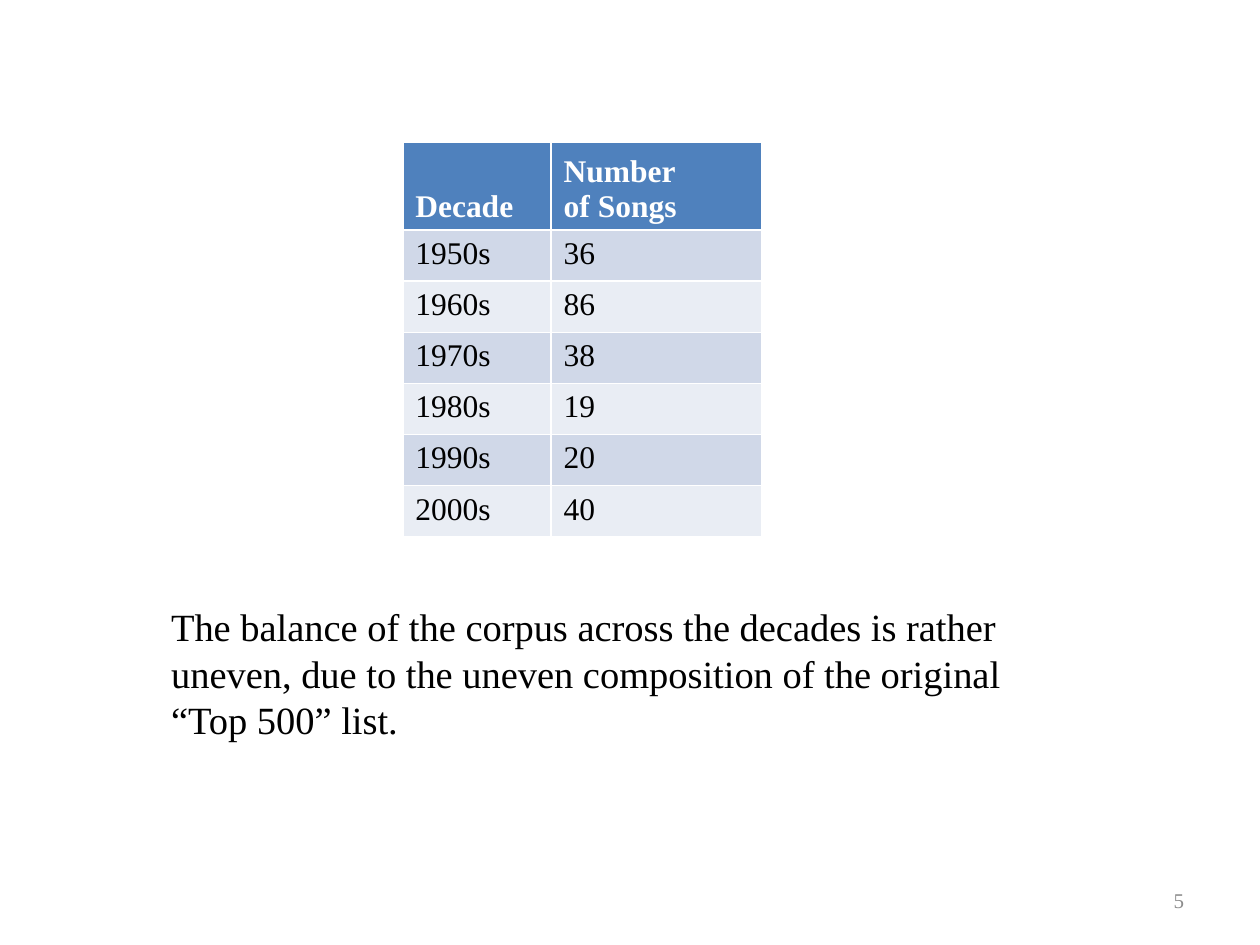
from pptx import Presentation
from pptx import util as u
from pptx.dml.color import RGBColor
from pptx.enum import text

FONT = "Times New Roman"


def style(paragraph, size, color, bold=False):
    font = paragraph.font
    font.name, font.size, font.bold = FONT, u.Pt(size), bold
    font.color.rgb = RGBColor.from_string(color)


def add_text(page, left, top, width, height, words, size, color):
    box = page.shapes.add_textbox(u.Cm(left), u.Cm(top), u.Cm(width), u.Cm(height))
    box.text_frame.word_wrap = True
    box.text_frame.text = words
    style(box.text_frame.paragraphs[0], size, color)
    return box.text_frame


deck = Presentation()
deck.slide_width, deck.slide_height = u.Cm(25.4), u.Cm(19.05)
page = deck.slides.add_slide(deck.slide_layouts[6])

# Page number
number = add_text(page, 18.2, 17.65, 5.92, 1.01, "5", 12, "8C8C8C")
number.vertical_anchor = text.MSO_ANCHOR.MIDDLE
number.paragraphs[0].alignment = text.PP_ALIGN.RIGHT

# Songs per decade; the default table style draws the white borders
rows = [
    ("Decade", "Number\nof Songs"),
    ("1950s", "36"),
    ("1960s", "86"),
    ("1970s", "38"),
    ("1980s", "19"),
    ("1990s", "20"),
    ("2000s", "40"),
]
widths = [2.99, 4.25]
header_height, row_height = 1.63, 1.03
table = page.shapes.add_table(
    len(rows), len(widths), u.Cm(8.12), u.Cm(2.86), u.Cm(sum(widths)),
    u.Cm(header_height + row_height * (len(rows) - 1)),
).table
for column, width in zip(table.columns, widths):
    column.width = u.Cm(width)

for r, values in enumerate(rows):
    header = r == 0
    table.rows[r].height = u.Cm(header_height if header else row_height)
    fill = "4F81BD" if header else ("E9EDF4", "D0D8E8")[r % 2]
    for c, value in enumerate(values):
        cell = table.cell(r, c)
        cell.text = value
        cell.fill.solid()
        cell.fill.fore_color.rgb = RGBColor.from_string(fill)
        if header:
            cell.vertical_anchor = text.MSO_ANCHOR.BOTTOM
        for paragraph in cell.text_frame.paragraphs:
            style(paragraph, 18, "FFFFFF" if header else "000000", header)

# Comment below the table
add_text(
    page, 3.2, 12.04, 17.58, 3.07,
    "The balance of the corpus across the decades is rather uneven, "
    "due to the uneven composition of the original “Top 500” list.",
    22, "000000",
)

deck.save("out.pptx")
